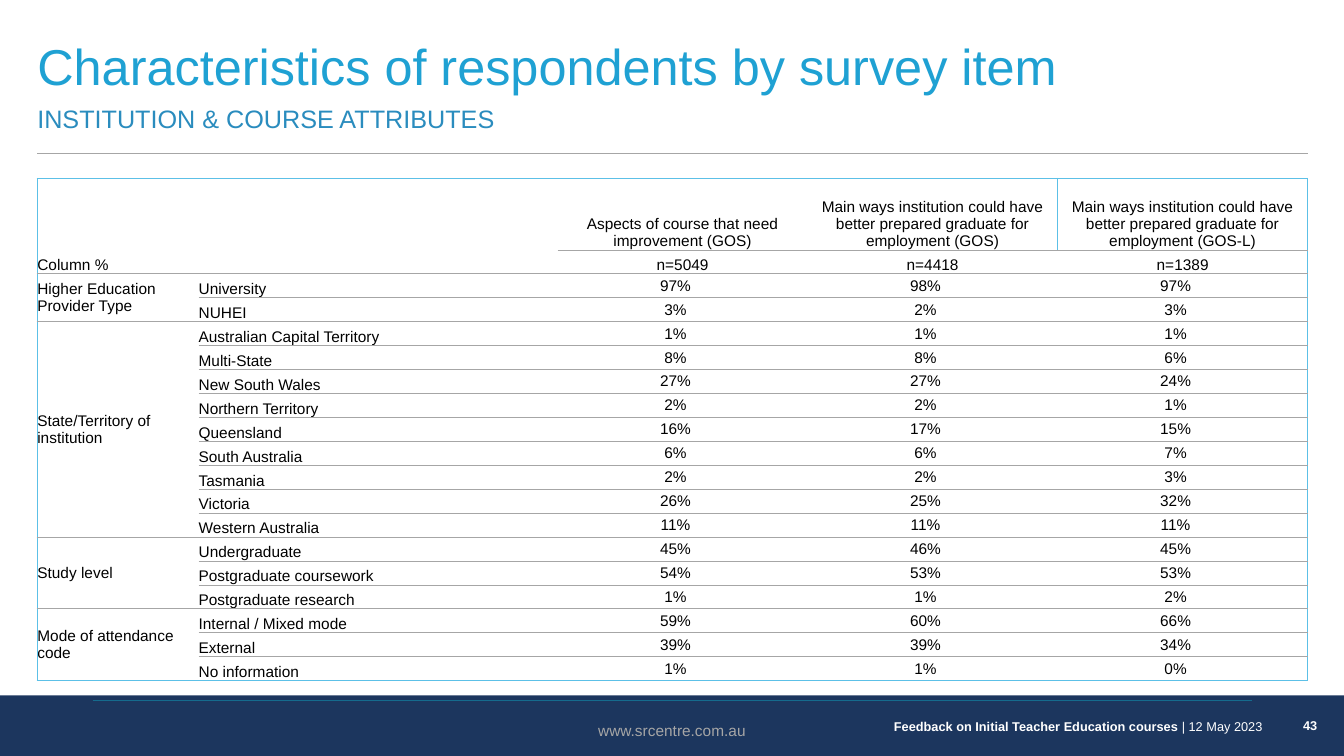
from lxml import etree
from pptx import Presentation
from pptx.dml.color import RGBColor
from pptx.enum.shapes import MSO_CONNECTOR, MSO_SHAPE
from pptx.enum.text import MSO_ANCHOR, MSO_AUTO_SIZE, PP_ALIGN
from pptx.oxml.ns import qn
from pptx.util import Inches, Pt

TOP, MIDDLE, BOTTOM = MSO_ANCHOR.TOP, MSO_ANCHOR.MIDDLE, MSO_ANCHOR.BOTTOM
LEFT, CENTER, RIGHT = PP_ALIGN.LEFT, PP_ALIGN.CENTER, PP_ALIGN.RIGHT

TITLE = "Characteristics of respondents by survey item"
SUBTITLE = "INSTITUTION & COURSE ATTRIBUTES"
REPORT, REPORT_DATE = "Feedback on Initial Teacher Education courses ", "| 12 May 2023"
WEBSITE, PAGE_NUMBER = "www.srcentre.com.au", "43"

CORNER = "Column %"
ITEMS = [
    ("Aspects of course that need improvement (GOS)", "n=5049"),
    ("Main ways institution could have better prepared graduate for employment (GOS)", "n=4418"),
    ("Main ways institution could have better prepared graduate for employment (GOS-L)", "n=1389"),
]
GROUPS = [
    ("Higher Education Provider Type", [
        ("University", 97, 98, 97),
        ("NUHEI", 3, 2, 3),
    ]),
    ("State/Territory of institution", [
        ("Australian Capital Territory", 1, 1, 1),
        ("Multi-State", 8, 8, 6),
        ("New South Wales", 27, 27, 24),
        ("Northern Territory", 2, 2, 1),
        ("Queensland", 16, 17, 15),
        ("South Australia", 6, 6, 7),
        ("Tasmania", 2, 2, 3),
        ("Victoria", 26, 25, 32),
        ("Western Australia", 11, 11, 11),
    ]),
    ("Study level", [
        ("Undergraduate", 45, 46, 45),
        ("Postgraduate coursework", 54, 53, 53),
        ("Postgraduate research", 1, 1, 2),
    ]),
    ("Mode of attendance code", [
        ("Internal / Mixed mode", 59, 60, 66),
        ("External", 39, 39, 34),
        ("No information", 1, 1, 0),
    ]),
]

THEME = {
    "font": "Arial",
    "title": "1FA1D3", "subtitle": "2A8CBE", "text": "000000", "white": "FFFFFF",
    "grey": "A6A6A6", "band": "1C365E", "band_line": "156B8D", "frame": "5CC0E7",
    "title_size": 36, "subtitle_size": 18, "table_size": 11, "footer_size": 9.1,
}
MARGIN, CONTENT_WIDTH = 0.37, 12.6
COLUMN_WIDTHS = [1.6, 3.56, 2.48, 2.48, 2.48]
HEADER_ROWS, HEADER_HEIGHT, TABLE_TOP, TABLE_HEIGHT = 2, 0.71, 1.77, 4.99
VALUE_INSET = 0.14


def color(name):
    return RGBColor.from_string(THEME[name])


def style(paragraph, size, color_name, align=LEFT, bold=False):
    paragraph.alignment = align
    for run in paragraph.runs:
        run.font.name = THEME["font"]
        run.font.size = Pt(THEME[size])
        run.font.color.rgb = color(color_name)
        run.font.bold = bold


def fill_frame(shape, text, size, color_name, align=LEFT, bold=False, anchor=TOP, inset=0.0):
    frame = shape.text_frame
    frame.text = text
    frame.word_wrap = True
    frame.auto_size = MSO_AUTO_SIZE.NONE
    frame.vertical_anchor = anchor
    frame.margin_left = frame.margin_right = Inches(inset)
    frame.margin_top = frame.margin_bottom = Inches(inset / 2)
    style(frame.paragraphs[0], size, color_name, align, bold)
    return frame.paragraphs[0]


def place(shape, left, top, width, height):
    shape.left, shape.top = Inches(left), Inches(top)
    shape.width, shape.height = Inches(width), Inches(height)


def add_text(slide, box, *args, **options):
    text_box = slide.shapes.add_textbox(*map(Inches, box))
    return fill_frame(text_box, *args, **options)


def add_rule(slide, left, right, y, color_name):
    rule = slide.shapes.add_connector(
        MSO_CONNECTOR.STRAIGHT, Inches(left), Inches(y), Inches(right), Inches(y))
    rule.line.color.rgb = color(color_name)
    rule.line.width = Pt(0.75)
    etree.SubElement(rule._element.spPr, qn("a:effectLst"))


def add_footer(slide):
    band = slide.shapes.add_shape(
        MSO_SHAPE.RECTANGLE, 0, Inches(6.9), Inches(13.33), Inches(0.6))
    band.shadow.inherit = False
    band.fill.solid()
    band.fill.fore_color.rgb = color("band")
    band.line.fill.background()
    report = add_text(slide, (4.54, 7.08, 8.08, 0.25), REPORT, "footer_size", "white",
                      RIGHT, True, MIDDLE, 0.1)
    report.add_run().text = REPORT_DATE
    style(report, "footer_size", "white", RIGHT)
    report.runs[0].font.bold = True
    add_text(slide, (12.66, 6.95, 0.67, 0.5), PAGE_NUMBER, "footer_size", "white",
             CENTER, True, MIDDLE)
    add_text(slide, (4.97, 7.1, 3.39, 0.29), WEBSITE, "table_size", "grey", CENTER, inset=0.1)
    add_rule(slide, 0.92, 12.42, 6.95, "band_line")


def set_border(cell, side, color_name):
    """Draw one side of a cell (L, R, T or B), or clear it when there is no colour."""
    properties = cell._tc.get_or_add_tcPr()
    width = Pt(0.75 if color_name == "grey" else 1)
    line = etree.Element(qn(f"a:ln{side}"), w=str(width))
    if color_name:
        fill = etree.SubElement(line, qn("a:solidFill"))
        etree.SubElement(fill, qn("a:srgbClr"), val=THEME[color_name])
    else:
        etree.SubElement(line, qn("a:noFill"))
    properties.insert("LRTB".index(side), line)


def fill_cell(cell, text, align=LEFT, anchor=MIDDLE, right_inset=0.0):
    cell.text = text
    cell.vertical_anchor = anchor
    cell.margin_left = cell.margin_top = cell.margin_bottom = 0
    cell.margin_right = Inches(right_inset)
    style(cell.text_frame.paragraphs[0], "table_size", "text", align)


def draw_borders(table, group_ends):
    last_row, last_column = len(table.rows) - 1, len(table.columns) - 1

    def line_below(row, column):
        if row in (-1, last_row):
            return "frame"
        if row == 0:
            return "grey" if column >= 2 else None
        return "grey" if column > 0 or row in group_ends else None

    def line_right(row, column):
        outer = column in (-1, last_column)
        return "frame" if outer or (row == 0 and column == last_column - 1) else None

    for row in range(last_row + 1):
        for column in range(last_column + 1):
            cell = table.cell(row, column)
            cell.fill.solid()
            cell.fill.fore_color.rgb = color("white")
            bottom_row = row + cell.span_height - 1 if cell.is_merge_origin else row
            set_border(cell, "L", line_right(row, column - 1))
            set_border(cell, "R", line_right(row, column))
            set_border(cell, "T", line_below(row - 1, column))
            set_border(cell, "B", line_below(bottom_row, column))


def add_survey_table(slide):
    row_count = HEADER_ROWS + sum(len(rows) for _, rows in GROUPS)
    frame = slide.shapes.add_table(
        row_count, len(COLUMN_WIDTHS), Inches(MARGIN), Inches(TABLE_TOP),
        Inches(CONTENT_WIDTH), Inches(TABLE_HEIGHT))
    table = frame.table
    table.first_row = table.horz_banding = False
    for column, width in zip(table.columns, COLUMN_WIDTHS):
        column.width = Inches(width)
    row_height = (TABLE_HEIGHT - HEADER_HEIGHT) / (row_count - 1)
    for index, row in enumerate(table.rows):
        row.height = Inches(row_height if index else HEADER_HEIGHT)

    table.cell(0, 0).merge(table.cell(1, 1))
    fill_cell(table.cell(0, 0), CORNER, anchor=BOTTOM)
    for column, labels in enumerate(ITEMS, start=2):
        for row, label in enumerate(labels):
            fill_cell(table.cell(row, column), label, CENTER, BOTTOM)

    group_ends = {HEADER_ROWS - 1}
    first = HEADER_ROWS
    for group, rows in GROUPS:
        last = first + len(rows) - 1
        table.cell(first, 0).merge(table.cell(last, 0))
        fill_cell(table.cell(first, 0), group)
        for row, (label, *values) in enumerate(rows, start=first):
            fill_cell(table.cell(row, 1), label, anchor=BOTTOM)
            for column, value in enumerate(values, start=2):
                fill_cell(table.cell(row, column), f"{value}%", CENTER, right_inset=VALUE_INSET)
        group_ends.add(last)
        first = last + 1
    draw_borders(table, group_ends)


def main():
    presentation = Presentation()
    presentation.slide_width, presentation.slide_height = Inches(13.33), Inches(7.5)
    slide = presentation.slides.add_slide(presentation.slide_layouts[1])
    add_footer(slide)
    add_rule(slide, MARGIN, MARGIN + CONTENT_WIDTH, 1.52, "grey")

    title, subtitle = slide.shapes.title, slide.placeholders[1]
    place(title, MARGIN, 0.3, CONTENT_WIDTH, 0.69)
    fill_frame(title, TITLE, "title_size", "title", anchor=MIDDLE)
    place(subtitle, MARGIN, 1.02, CONTENT_WIDTH, 0.49)
    paragraph = fill_frame(subtitle, SUBTITLE, "subtitle_size", "subtitle")
    paragraph.space_before = Pt(0)
    properties = paragraph._p.get_or_add_pPr()
    properties.set("marL", "0")
    properties.set("indent", "0")
    etree.SubElement(properties, qn("a:buNone"))

    add_survey_table(slide)
    presentation.save("out.pptx")


if __name__ == "__main__":
    main()
